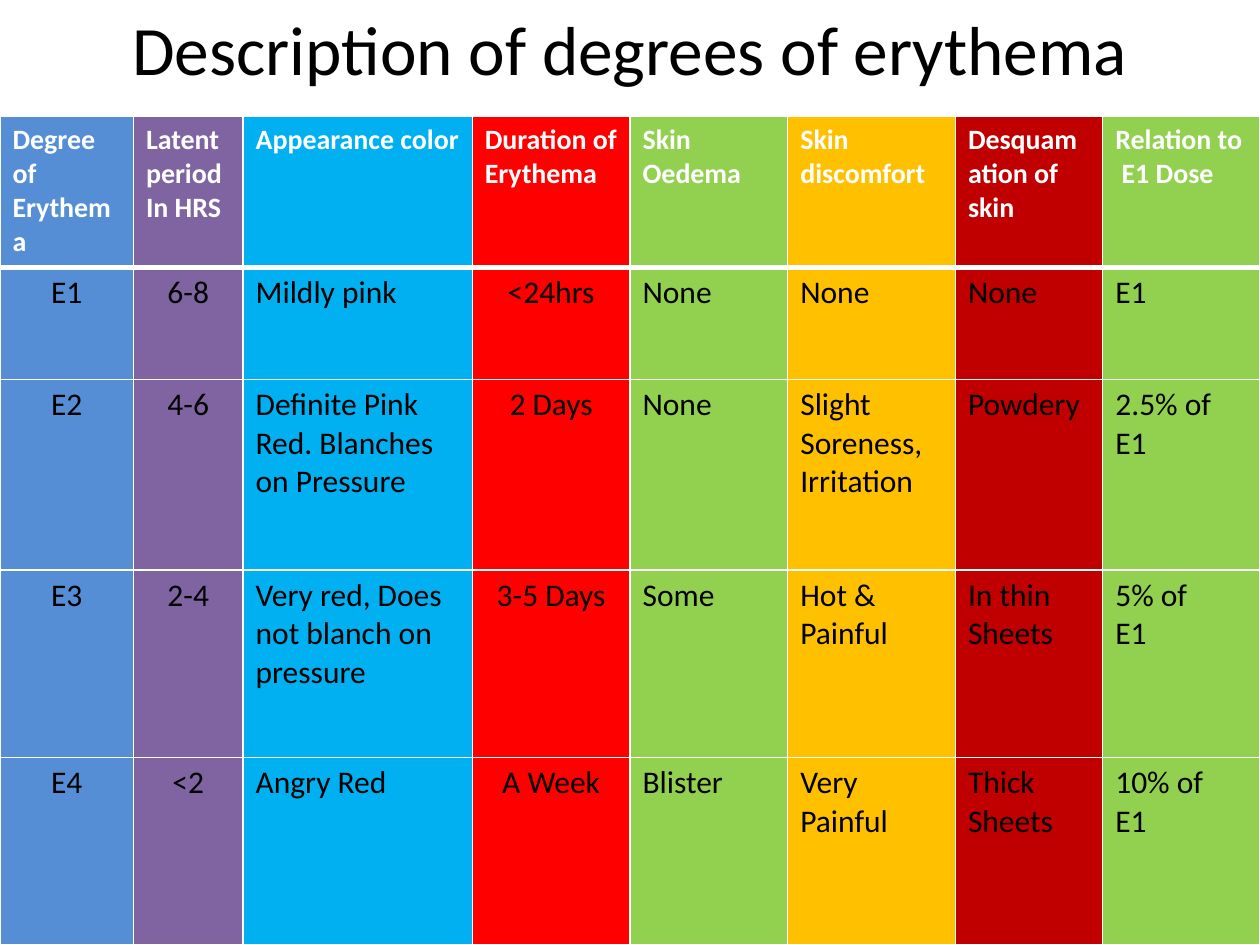
from lxml import etree
from pptx import Presentation
from pptx import util as u
from pptx.dml.color import RGBColor
from pptx.enum import text
from pptx.oxml import ns


def paint(fill, hue):
    fill.solid()
    fill.fore_color.rgb = RGBColor.from_string(hue)


def edge(cell, side, width):
    line = etree.SubElement(cell._tc.get_or_add_tcPr(), ns.qn("a:ln" + side), w=str(u.Pt(width)))
    fill = etree.SubElement(line, ns.qn("a:solidFill"))
    etree.SubElement(fill, ns.qn("a:srgbClr"), val="FFFFFF")


deck = Presentation()
deck.slide_width, deck.slide_height = u.Cm(25.4), u.Cm(19.05)
slide = deck.slides.add_slide(deck.slide_layouts[5])

title = slide.shapes.title
title.left, title.top, title.width, title.height = u.Cm(0), u.Cm(0), u.Cm(25.4), u.Cm(1.93)
title.text_frame.vertical_anchor = text.MSO_ANCHOR.MIDDLE
para = title.text_frame.paragraphs[0]
para.alignment = text.PP_ALIGN.CENTER
run = para.add_run()
run.text = "Description of degrees of erythema"
run.font.name, run.font.size = "Calibri", u.Pt(39.6)
paint(run.font.fill, "000000")

hues = ["558ED5", "8064A2", "00B0F0", "FF0000", "92D050", "FFC000", "C00000", "92D050"]
wides = [2.69, 2.21, 4.62, 3.18, 3.18, 3.38, 2.97, 3.17]
highs = [3.05, 2.26, 3.84, 3.78, 3.78]
mids = [0, 1, 3]
rows = [
    ["Degree of Erythema", "Latent period\nIn HRS", "Appearance color", "Duration of Erythema",
     "Skin Oedema", "Skin discomfort", "Desquamation of skin", "Relation to\n E1 Dose"],
    ["E1", "6-8", "Mildly pink", "<24hrs", "None", "None", "None", "E1"],
    ["E2", "4-6", "Definite Pink Red. Blanches on Pressure", "2 Days", "None",
     "Slight Soreness, Irritation", "Powdery", "2.5% of\nE1"],
    ["E3", "2-4", "Very red, Does not blanch on pressure", "3-5 Days", "Some",
     "Hot & Painful", "In thin Sheets", "5% of\nE1"],
    ["E4", "<2", "Angry Red", "A Week", "Blister", "Very Painful", "Thick Sheets", "10% of\nE1"],
]

table = slide.shapes.add_table(len(rows), len(hues), u.Cm(0), u.Cm(2.34),
                               u.Cm(sum(wides)), u.Cm(sum(highs))).table
for col, wide in zip(table.columns, wides):
    col.width = u.Cm(wide)
for row, high in zip(table.rows, highs):
    row.height = u.Cm(high)

for r, row in enumerate(rows):
    head = r == 0
    for c, words in enumerate(row):
        cell = table.cell(r, c)
        edge(cell, "L", 1)
        edge(cell, "R", 1)
        edge(cell, "T", 3 if r == 1 else 1)
        edge(cell, "B", 3 if head else 1)
        paint(cell.fill, hues[c])
        for n, part in enumerate(words.split("\n")):
            frame = cell.text_frame
            para = frame.add_paragraph() if n else frame.paragraphs[0]
            if c in mids and not head:
                para.alignment = text.PP_ALIGN.CENTER
            run = para.add_run()
            run.text = part
            run.font.name, run.font.bold = "Calibri", head
            run.font.size = u.Pt(16 if head else 18)
            paint(run.font.fill, "FFFFFF" if head else "000000")

deck.save("out.pptx")
